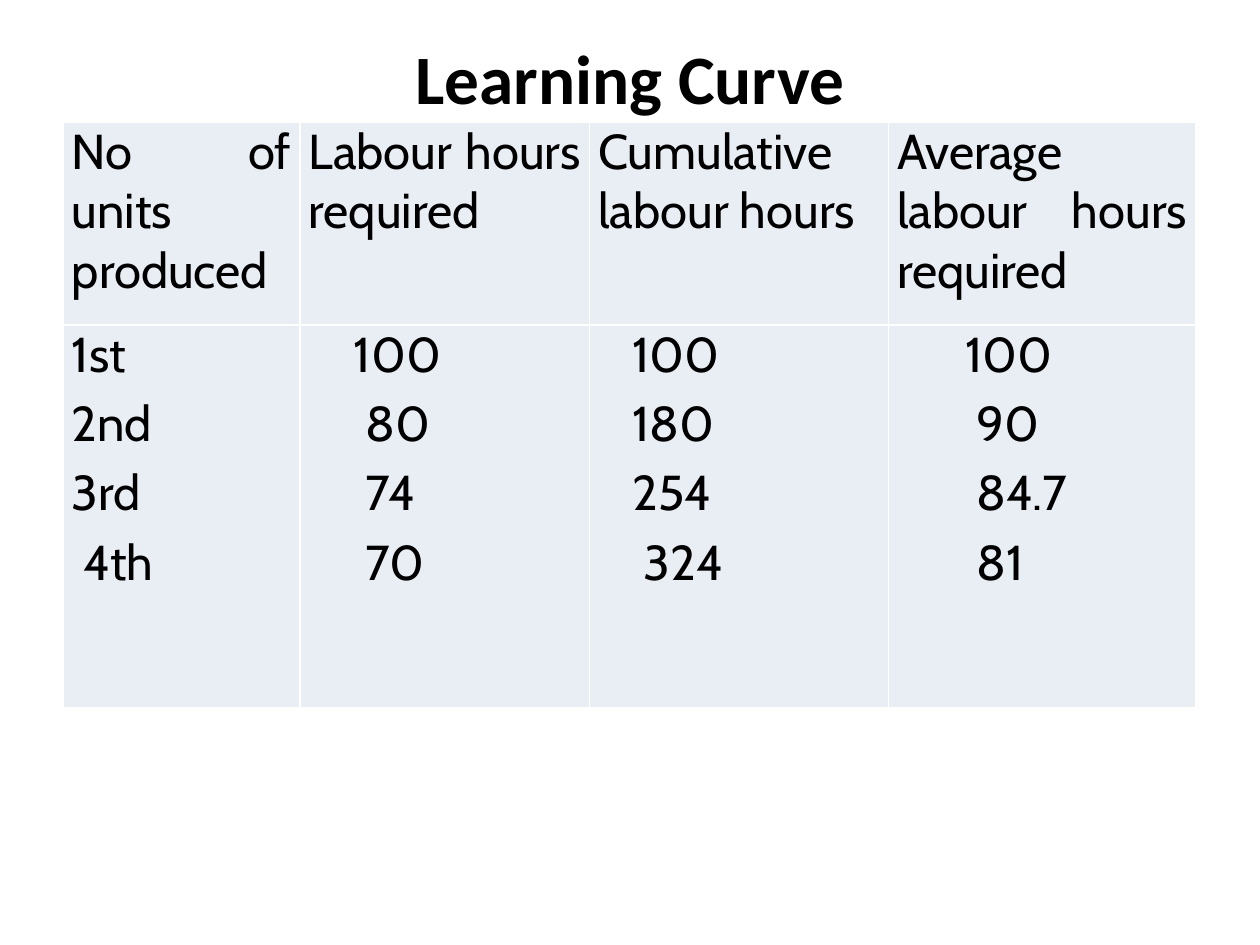
from pptx import Presentation
from pptx.dml.color import RGBColor
from pptx.enum.text import MSO_ANCHOR, PP_ALIGN
from pptx.oxml.ns import qn
from pptx.util import Inches, Pt
from lxml.etree import SubElement

TITLE = "Learning Curve"
# Each column: width, heading, entries as (text, indent steps)
COLUMNS = [
    (1.88, "No of units produced",
     [("1st", 0), ("2nd", 0), ("3rd", 0), ("4th", 1)]),
    (2.3, "Labour hours required",
     [("100", 4), ("80", 5), ("74", 5), ("70", 5)]),
    (2.37, "Cumulative labour hours",
     [("100", 3), ("180", 3), ("254", 3), ("324", 4)]),
    (2.44, "Average labour hours required",
     [("100", 6), ("90", 7), ("84.7", 7), ("81", 7)]),
]
ROWS = [1.61, 3.04]
LEFT, TOP, WIDTH = 0.5, 0.97, 9
STEP = 0.09
INK, PALE, WHITE = "000000", "E9EDF4", "FFFFFF"


def color(code):
    return RGBColor.from_string(code)


def style(para, font, size, align, bold=False):
    para.alignment = align
    for run in para.runs:
        run.font.name, run.font.size, run.font.bold = font, Pt(size), bold
        run.font.color.rgb = color(INK)


def border(cell):
    props = cell._tc.get_or_add_tcPr()
    for i, side in enumerate(("lnL", "lnR", "lnT", "lnB")):
        line = props.makeelement(qn(f"a:{side}"), {"w": str(Pt(1))})
        fill = SubElement(line, qn("a:solidFill"))
        SubElement(fill, qn("a:srgbClr"), val=WHITE)
        props.insert(i, line)


def write(cell, lines):
    cell.fill.solid()
    cell.fill.fore_color.rgb = color(PALE)
    cell.margin_left = cell.margin_right = Inches(0.07)
    cell.margin_top = cell.margin_bottom = 0
    border(cell)
    frame = cell.text_frame
    frame.text = "\n".join(text for text, _ in lines)
    for para, (_, steps) in zip(frame.paragraphs, lines):
        style(para, "Cabin", 28, PP_ALIGN.JUSTIFY)
        para.space_before = Pt(5.6)
        para._p.get_or_add_pPr().set("marL", str(Inches(steps * STEP)))


deck = Presentation()
deck.slide_width, deck.slide_height = Inches(10), Inches(7.5)
slide = deck.slides.add_slide(deck.slide_layouts[5])

# Title
title = slide.shapes.title
title.left, title.top = Inches(LEFT), Inches(0.3)
title.width, title.height = Inches(WIDTH), Inches(0.62)
title.text_frame.text = TITLE
title.text_frame.vertical_anchor = MSO_ANCHOR.MIDDLE
style(title.text_frame.paragraphs[0], "Calibri", 39.6, PP_ALIGN.CENTER, True)

# Table of hours
table = slide.shapes.add_table(
    len(ROWS), len(COLUMNS), Inches(LEFT), Inches(TOP),
    Inches(WIDTH), Inches(sum(ROWS))).table
for row, height in zip(table.rows, ROWS):
    row.height = Inches(height)
for col, (width, head, items) in enumerate(COLUMNS):
    table.columns[col].width = Inches(width)
    write(table.cell(0, col), [(head, 0)])
    write(table.cell(1, col), items)

deck.save("out.pptx")
